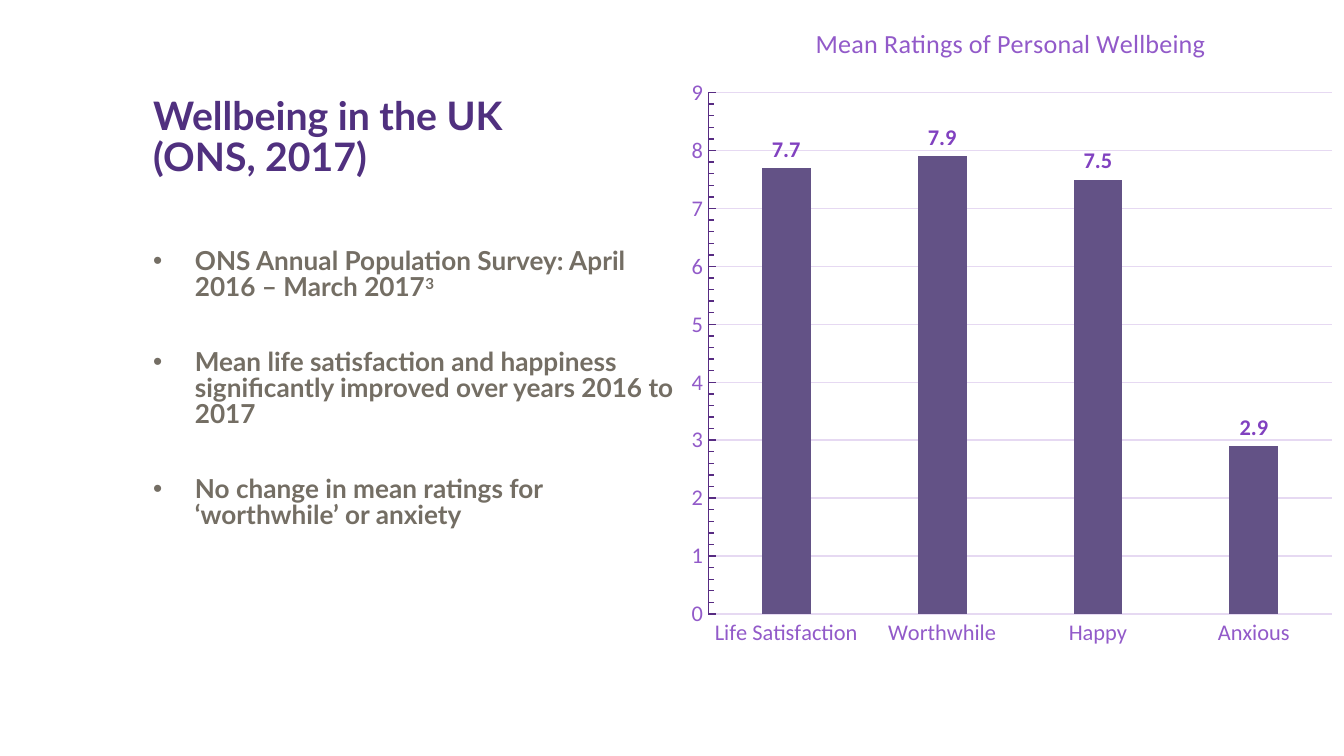
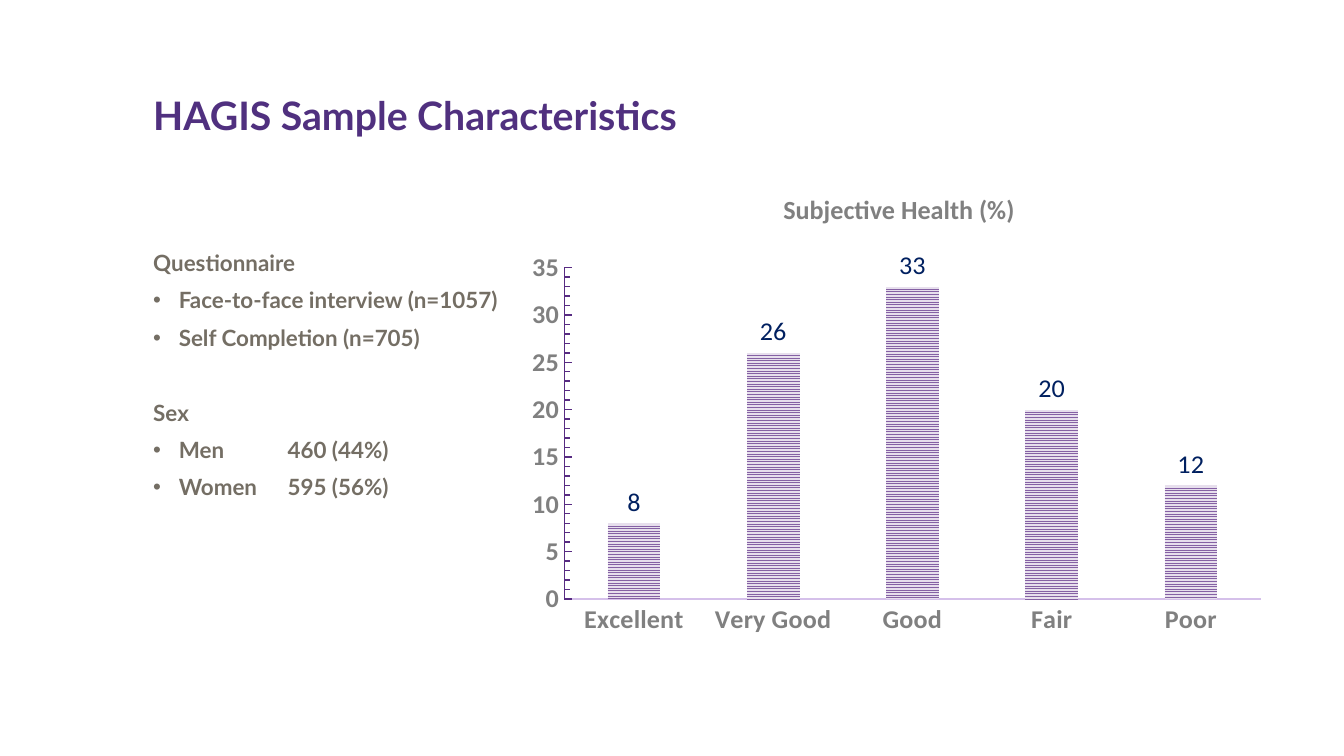
from lxml.etree import SubElement
from pptx import Presentation
from pptx.chart.data import CategoryChartData
from pptx.dml.color import RGBColor
from pptx.enum.chart import XL_CHART_TYPE, XL_LABEL_POSITION, XL_TICK_MARK
from pptx.enum.dml import MSO_PATTERN
from pptx.enum.text import MSO_ANCHOR, MSO_AUTO_SIZE, PP_ALIGN
from pptx.oxml import parse_xml
from pptx.oxml.ns import nsdecls, qn
from pptx.util import Inches, Pt

HEADING, BODY = "50307F", "746E64"
AXIS, LILAC, GRID, GREY = "572B82", "925AC9", "E6D9F2", "808080"
LEFT = 1.14


def rgb(hex_code):
    """Turn a hex string into a colour."""
    return RGBColor.from_string(hex_code)


def style(font, size, color, bold=False, name="Calibri"):
    """Set every trait of a font."""
    font.name, font.size, font.bold = name, Pt(size), bold
    font.color.rgb = rgb(color)


def place(placeholder, top, width, height):
    """Move a placeholder to the left column and clear its insets."""
    placeholder.left, placeholder.top = Inches(LEFT), Inches(top)
    placeholder.width, placeholder.height = Inches(width), Inches(height)
    frame = placeholder.text_frame
    frame.margin_left = frame.margin_right = 0
    frame.margin_top = frame.margin_bottom = 0
    frame.word_wrap = True
    frame.auto_size = MSO_AUTO_SIZE.NONE
    frame.vertical_anchor = MSO_ANCHOR.TOP
    return frame


def add_slide(prs, heading, width):
    """Add a slide with its heading."""
    slide = prs.slides.add_slide(prs.slide_layouts[1])
    title = place(slide.shapes.title, 0.72, width, 1.09).paragraphs[0]
    title.text = heading
    title.alignment = PP_ALIGN.LEFT
    title.line_spacing = Pt(22)
    style(title.font, 21, HEADING, True, "Lato")
    return slide


def set_bullet(paragraph, indent):
    """Give a paragraph a hanging bullet, or none when indent is zero."""
    props = paragraph._p.get_or_add_pPr()
    props.set("marL", str(Inches(indent)))
    props.set("indent", str(-Inches(indent)))
    if indent:
        SubElement(props, qn("a:buChar")).set("char", "•")
    else:
        SubElement(props, qn("a:buNone"))


def fill_body(slide, width, size, items):
    """Write (text, indent, space before) items into the body."""
    frame = place(slide.placeholders[1], 1.86, width, 3.03)
    for position, (text, indent, before) in enumerate(items):
        item = frame.add_paragraph() if position else frame.paragraphs[0]
        item.text = text
        set_bullet(item, indent)
        item.line_spacing = Pt(14)
        item.space_before, item.space_after = Pt(before), Pt(6)
        style(item.font, size, BODY, True, "Lato")
    return frame


def add_superscript(paragraph, text):
    """Append a raised run to a paragraph."""
    run = paragraph.add_run()
    run.text = text
    run._r.get_or_add_rPr().set("baseline", "30000")


def set_plot_area(chart, box, plot_box):
    """Fix the inner plot area, given in inches within the chart box."""
    chart_size = box[2:] * 2
    parts = "".join(f'<c:{tag} val="{length / whole:.4f}"/>'
                    for tag, length, whole in zip("xywh", plot_box, chart_size))
    layout = parse_xml(
        f'<c:layout {nsdecls("c")}><c:manualLayout><c:layoutTarget val="inner"/>'
        f'<c:xMode val="edge"/><c:yMode val="edge"/>{parts}</c:manualLayout></c:layout>')
    plot_area = chart._chartSpace.find(".//" + qn("c:plotArea"))
    for default in plot_area.findall(qn("c:layout")):
        plot_area.remove(default)
    plot_area.insert(0, layout)


def style_axis(axis, tick, text, line_color, line_width):
    """Format the ticks, labels and line of an axis."""
    axis.major_tick_mark = axis.minor_tick_mark = tick
    style(axis.tick_labels.font, *text)
    axis.format.line.color.rgb = rgb(line_color)
    axis.format.line.width = Pt(line_width)


def add_columns(slide, box, ratings, plot_box, gap, overlap, axis_text, label_text,
                base_line, scale):
    """Add a one-series column chart with value labels."""
    data = CategoryChartData()
    data.categories = list(ratings)
    data.add_series("Series 1", list(ratings.values()))
    chart = slide.shapes.add_chart(
        XL_CHART_TYPE.COLUMN_CLUSTERED, *map(Inches, box), data).chart
    style(chart.font, 10, AXIS)
    chart.has_legend = chart.has_title = False
    set_plot_area(chart, box, plot_box)

    style_axis(chart.category_axis, XL_TICK_MARK.NONE, axis_text, *base_line)
    values = chart.value_axis
    style_axis(values, XL_TICK_MARK.INSIDE, axis_text, AXIS, 0.75)
    values.minimum_scale = 0
    values.maximum_scale, values.major_unit, values.minor_unit = scale
    values.has_major_gridlines = False

    plot = chart.plots[0]
    plot.gap_width, plot.overlap, plot.vary_by_categories = gap, overlap, False
    plot.series[0].invert_if_negative = False
    labels = plot.series[0].data_labels
    labels.show_value = True
    labels.position = XL_LABEL_POSITION.OUTSIDE_END
    style(labels.font, *label_text)
    return chart


def build_uk_slide(prs):
    """Build the slide on wellbeing in the UK."""
    slide = add_slide(prs, "Wellbeing in the UK\n(ONS, 2017)", 3.23)
    survey = fill_body(slide, 3.9, 14, [
        ("ONS Annual Population Survey: April 2016 – March 2017", 0.31, 0),
        ("Mean life satisfaction and happiness significantly improved "
         "over years 2016 to 2017", 0.31, 20),
        ("No change in mean ratings for ‘worthwhile’ or anxiety", 0.31, 20),
    ])
    add_superscript(survey.paragraphs[0], "3")

    ratings = {"Life Satisfaction": 7.7, "Worthwhile": 7.9, "Happy": 7.5, "Anxious": 2.9}
    chart = add_columns(
        slide, (5.04, 0, 4.96, 4.9), ratings, (0.23, 0.69, 4.64, 3.88), 219, -27,
        (12, LILAC), (12, "8141C0", True), (GRID, 0.75), (9, 1, 0.2))
    chart.has_title = True
    chart.chart_title.include_in_layout = False
    caption = chart.chart_title.text_frame.paragraphs[0]
    caption.text = "Mean Ratings of Personal Wellbeing"
    style(caption.font, 14, LILAC)
    chart.value_axis.has_major_gridlines = True
    grid = chart.value_axis.major_gridlines.format.line
    grid.color.rgb, grid.width = rgb(GRID), Pt(0.75)
    bars = chart.plots[0].series[0].format.fill
    bars.solid()
    bars.fore_color.rgb = rgb("635286")


def build_sample_slide(prs):
    """Build the slide on the HAGIS sample."""
    slide = add_slide(prs, "HAGIS Sample Characteristics", 4.92)
    fill_body(slide, 2.81, 12, [
        ("Questionnaire", 0, 0),
        ("Face-to-face interview (n=1057)", 0.19, 0),
        ("Self Completion (n=705)", 0.19, 0),
        ("Sex", 0, 20),
        ("Men\t460 (44%)", 0.19, 0),
        ("Women\t595 (56%)", 0.19, 0),
    ])

    health = {"Excellent": 8, "Very Good": 26, "Good": 33, "Fair": 20, "Poor": 12}
    chart = add_columns(
        slide, (3.95, 1.86, 5.51, 2.87), health, (0.25, 0.13, 5.18, 2.53), 164, -22,
        (14, GREY, True), (14, "002060"), ("D5C0EA", 1.5), (35, 5, 1))
    bars = chart.plots[0].series[0].format.fill
    bars.patterned()
    bars.pattern = MSO_PATTERN.NARROW_HORIZONTAL
    bars.fore_color.rgb, bars.back_color.rgb = rgb("8561A4"), rgb("E7DFED")

    frame = slide.shapes.add_textbox(*map(Inches, (5.73, 1.39, 1.94, 0.34))).text_frame
    frame.word_wrap = False
    frame.auto_size = MSO_AUTO_SIZE.SHAPE_TO_FIT_TEXT
    caption = frame.paragraphs[0]
    caption.text = "Subjective Health (%)"
    style(caption.font, 14, GREY, True)


def main():
    """Build and save the presentation."""
    prs = Presentation()
    prs.slide_width = Inches(10)
    prs.slide_height = prs.slide_width * 9 // 16
    build_uk_slide(prs)
    build_sample_slide(prs)
    prs.save("out.pptx")


if __name__ == "__main__":
    main()
